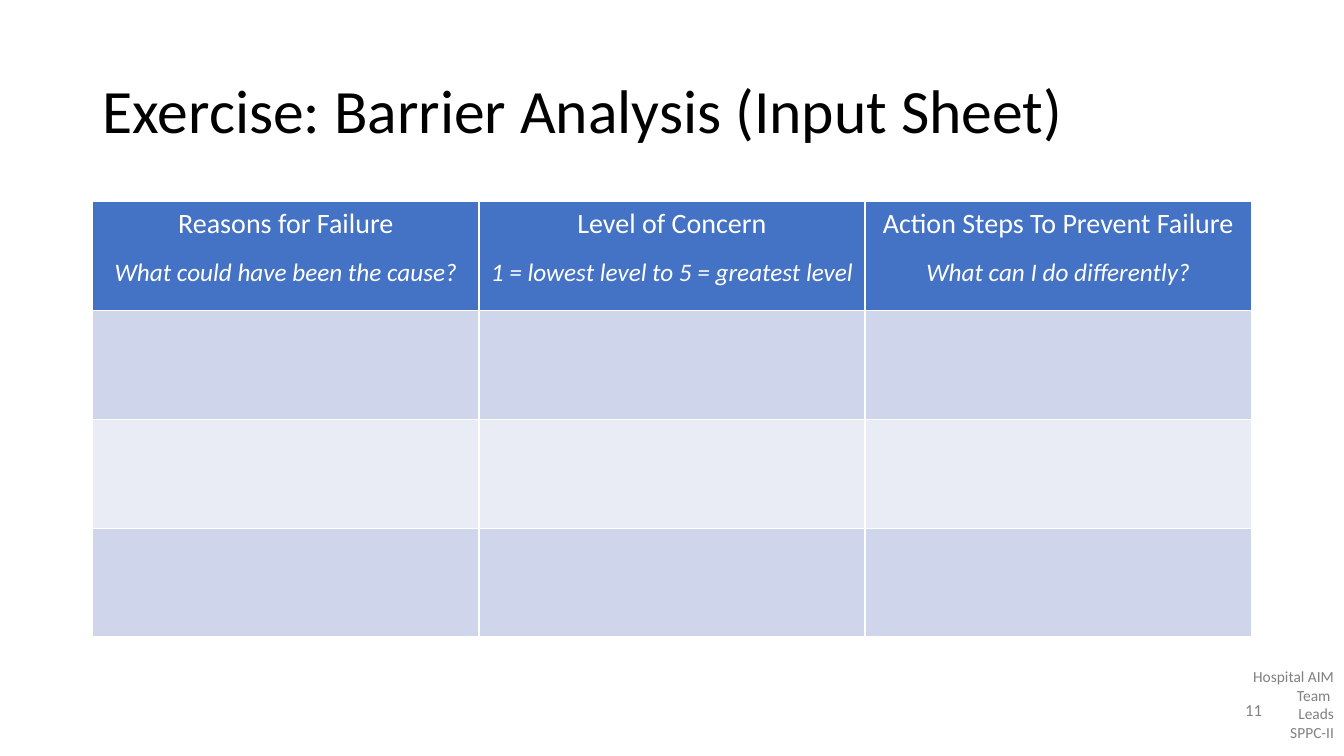
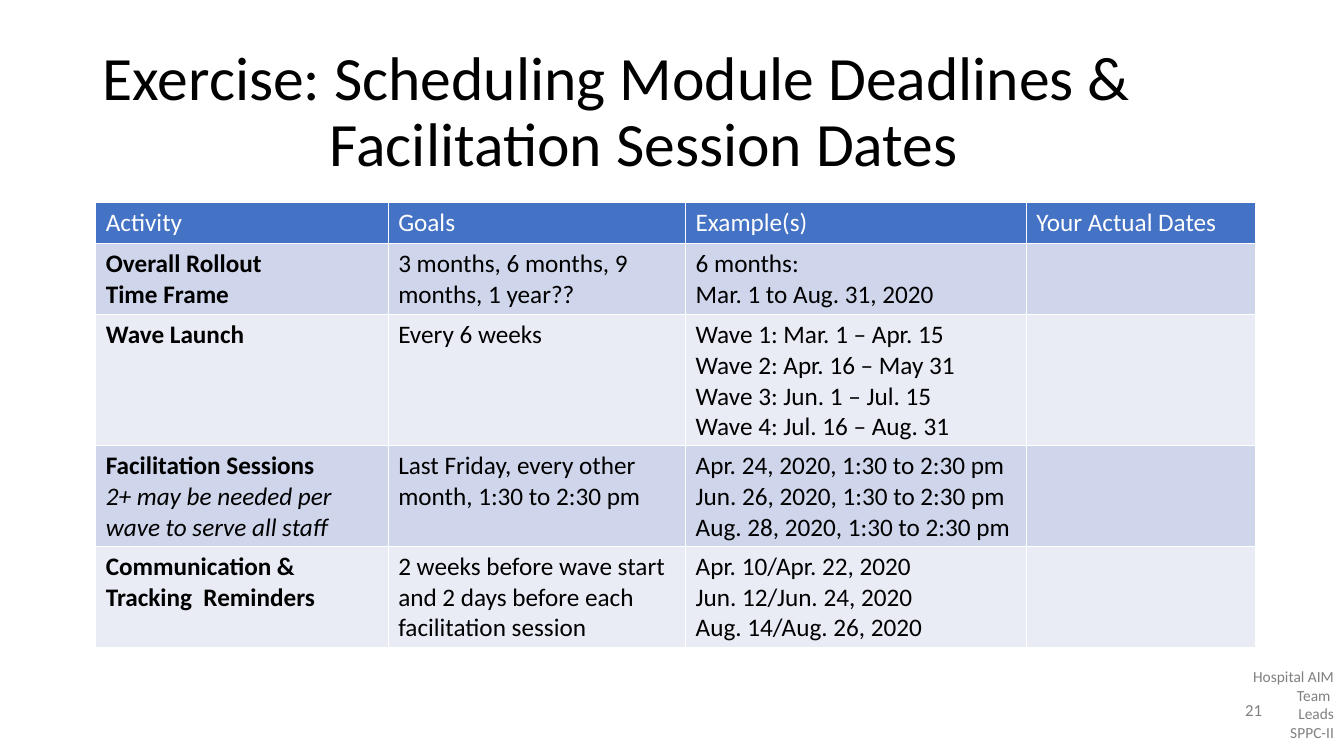
from pptx import Presentation
from pptx.dml.color import RGBColor
from pptx.enum.text import MSO_ANCHOR, MSO_AUTO_SIZE, PP_ALIGN
from pptx.util import Inches, Pt

LEFT, CENTER, RIGHT = PP_ALIGN.LEFT, PP_ALIGN.CENTER, PP_ALIGN.RIGHT
MIDDLE = MSO_ANCHOR.MIDDLE
NO_AUTOFIT = MSO_AUTO_SIZE.NONE

BLACK = RGBColor(0x00, 0x00, 0x00)
WHITE = RGBColor(0xFF, 0xFF, 0xFF)
GREY = RGBColor(0x80, 0x80, 0x80)
HEADER_BLUE = RGBColor(0x44, 0x72, 0xC4)
BANDS = [RGBColor(0xE9, 0xEB, 0xF5), RGBColor(0xCF, 0xD5, 0xEA)]
FONT = "Calibri"
TITLE_ONLY = 5

prs = Presentation()
prs.slide_width, prs.slide_height = Inches(13.33), Inches(7.5)


def add_text(tf, text, size=18, color=BLACK, bold=False, italic=False,
             align=LEFT, space_before=0):
    """Fill the empty first paragraph of a text frame, or append a paragraph."""
    p = tf.add_paragraph() if tf.text else tf.paragraphs[0]
    p.alignment = align
    if space_before:
        p.space_before = Pt(space_before)
    r = p.add_run()
    r.text = text
    r.font.name, r.font.size = FONT, Pt(size)
    r.font.bold, r.font.italic = bold, italic
    r.font.color.rgb = color
    return p


def add_exercise(title, number, left, top, widths, heights):
    """Add a slide with title, footer and banded table; return title paragraph and table."""
    s = prs.slides.add_slide(prs.slide_layouts[TITLE_ONLY])

    footer = s.shapes.add_textbox(Inches(12.17), Inches(6.57), Inches(1.16), Inches(0.84))
    footer.text_frame.word_wrap = True
    for line in ["Hospital AIM Team ", "Leads", "SPPC-II"]:
        add_text(footer.text_frame, line, size=11, color=GREY, align=RIGHT)

    sp = s.shapes.title
    sp.left, sp.top, sp.width, sp.height = Inches(0.92), Inches(0.4), Inches(11.5), Inches(1.45)
    sp.text_frame.auto_size = NO_AUTOFIT
    sp.text_frame.vertical_anchor = MIDDLE
    title_p = add_text(sp.text_frame, title, size=44)
    title_p.line_spacing = 0.9

    page = s.shapes.add_textbox(Inches(12.2), Inches(6.84), Inches(0.47), Inches(0.4))
    page.text_frame.word_wrap = True
    page.text_frame.vertical_anchor = MIDDLE
    add_text(page.text_frame, number, size=12, color=GREY, align=CENTER)

    table = s.shapes.add_table(len(heights), len(widths), Inches(left), Inches(top),
                               Inches(sum(widths)), Inches(sum(heights))).table
    for column, width in zip(table.columns, widths):
        column.width = Inches(width)
    for i, (row, height) in enumerate(zip(table.rows, heights)):
        row.height = Inches(height)
        for cell in row.cells:
            cell.fill.solid()
            cell.fill.fore_color.rgb = BANDS[i % 2] if i else HEADER_BLUE
    return title_p, table


# Barrier analysis
barrier_headers = [
    ("Reasons for Failure", "What could have been the cause?"),
    ("Level of Concern", "1 = lowest level to 5 = greatest level"),
    ("Action Steps To Prevent Failure", "What can I do differently?"),
]
_, table = add_exercise("Exercise: Barrier Analysis (Input Sheet)", "11",
                        0.92, 2, [3.83] * 3, [1.08] * 4)
for cell, (heading, prompt) in zip(table.rows[0].cells, barrier_headers):
    add_text(cell.text_frame, heading, size=20, color=WHITE, align=CENTER)
    add_text(cell.text_frame, prompt, color=WHITE, italic=True, align=CENTER, space_before=12)

# Schedule: each cell is a list of paragraphs
schedule_headers = ["Activity", "Goals", "Example(s)", "Your Actual Dates"]
schedule = [
    (["Overall Rollout", "Time Frame"],
     ["3 months, 6 months, 9 months, 1 year??"],
     ["6 months:", "Mar. 1 to Aug. 31, 2020"]),
    (["Wave Launch"],
     ["Every 6 weeks"],
     ["Wave 1: Mar. 1 – Apr. 15", "Wave 2: Apr. 16 – May 31",
      "Wave 3: Jun. 1 – Jul. 15", "Wave 4: Jul. 16 – Aug. 31"]),
    (["Facilitation Sessions", "2+ may be needed per wave to serve all staff"],
     ["Last Friday, every other month, 1:30 to 2:30 pm"],
     ["Apr. 24, 2020, 1:30 to 2:30 pm", "Jun. 26, 2020, 1:30 to 2:30 pm",
      "Aug. 28, 2020, 1:30 to 2:30 pm"]),
    (["Communication & Tracking  Reminders"],
     ["2 weeks before wave start and 2 days before each", "facilitation session"],
     ["Apr. 10/Apr. 22, 2020", "Jun. 12/Jun. 24, 2020", "Aug. 14/Aug. 26, 2020"]),
]
title_p, table = add_exercise(
    "Exercise: Scheduling Module Deadlines & Facilitation Session Dates", "21",
    0.95, 2.01, [2.9, 2.95, 3.38, 2.27], [0.41] * 5)
pPr = title_p._p.get_or_add_pPr()
pPr.set("marL", str(Inches(2.25)))
pPr.set("indent", str(Inches(-2.25)))

for cell, heading in zip(table.rows[0].cells, schedule_headers):
    add_text(cell.text_frame, heading, color=WHITE)
for i, row in enumerate(schedule, start=1):
    for j, lines in enumerate(row):
        for line in lines:
            note = line.startswith("2+")
            add_text(table.cell(i, j).text_frame, line, bold=j == 0 and not note, italic=note)

prs.save("out.pptx")
